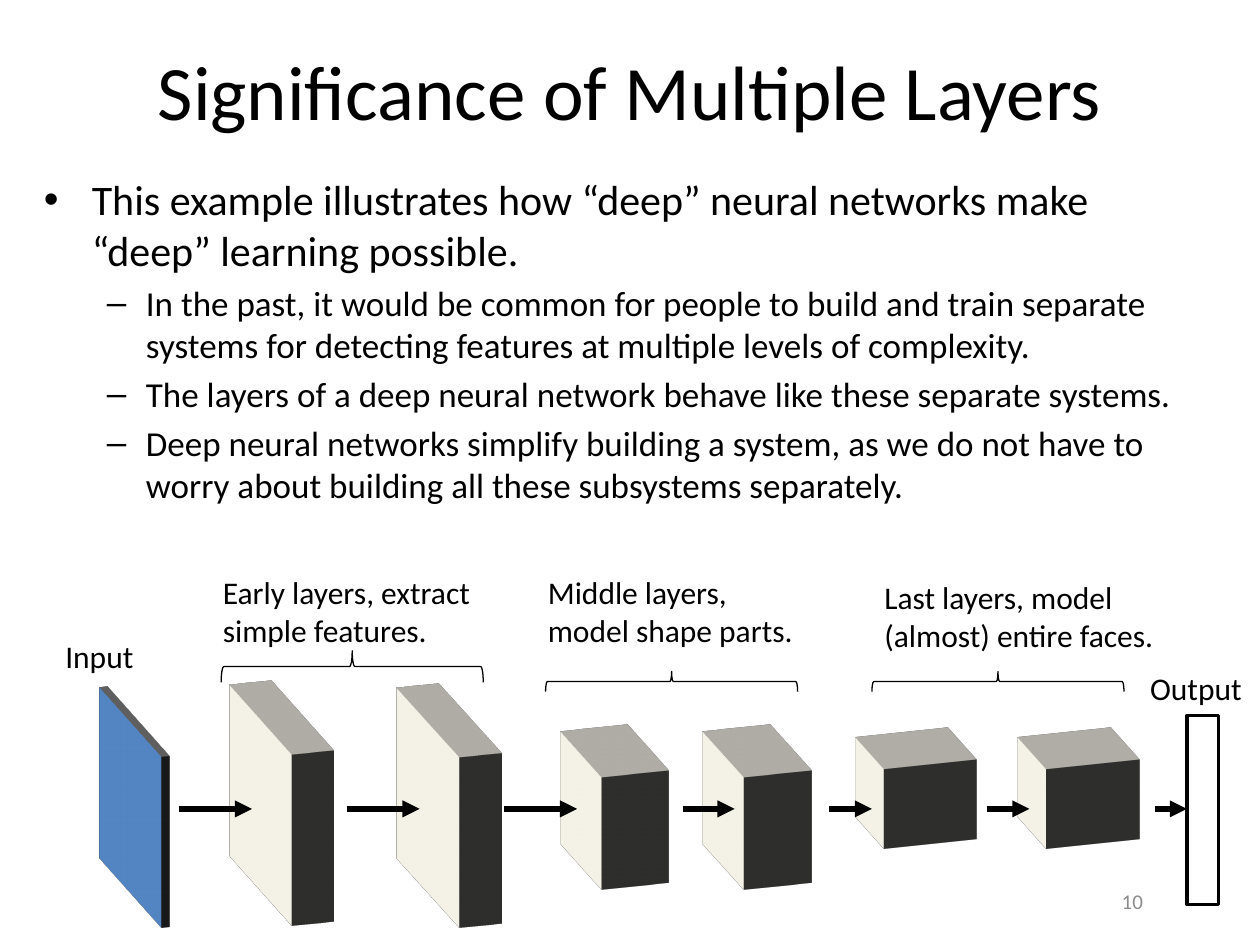
from lxml.etree import SubElement
from pptx import Presentation
from pptx.dml.color import RGBColor
from pptx.enum.shapes import MSO_CONNECTOR, MSO_SHAPE
from pptx.enum.text import MSO_ANCHOR, PP_ALIGN
from pptx.oxml.ns import qn
from pptx.util import Inches, Pt

BLACK = RGBColor(0x00, 0x00, 0x00)
NUMBER_GRAY = RGBColor(0x8C, 0x8C, 0x8C)
INPUT_BLUE = RGBColor(0x4F, 0x81, 0xBD)
INPUT_EDGE = RGBColor(0x80, 0x80, 0x80)
LAYER_GRAY = RGBColor(0xEE, 0xEC, 0xE1)
# View of the blocks, in degrees
LATITUDE, LONGITUDE = 20, 73
DEGREE = 60000

BULLETS = [
    (0, "This example illustrates how “deep” neural networks make “deep” learning possible."),
    (1, "In the past, it would be common for people to build and train separate systems "
        "for detecting features at multiple levels of complexity."),
    (1, "The layers of a deep neural network behave like these separate systems."),
    (1, "Deep neural networks simplify building a system, as we do not have to worry "
        "about building all these subsystems separately."),
]
# Bullet sign, size, left margin, hanging indent
LEVELS = [("•", 24, 0.38, -0.38), ("–", 20, 0.81, -0.31)]

# Label text and box, brace box (before its quarter turn)
GROUPS = [
    ("Early layers, extract simple features.", (1.67, 4.5, 2.17, 0.71), (2.67, 4.25, 0.25, 2.08)),
    ("Middle layers, model shape parts.", (4.25, 4.5, 2.17, 0.71), (5.25, 4.41, 0.16, 2)),
    ("Last layers, model (almost) entire faces.", (6.92, 4.54, 2.42, 0.71), (7.84, 4.41, 0.16, 2)),
]
# Front box, depth, front colour, edge colour
BLOCKS = [
    ((0.19, 5.69, 1.69, 1.44), 0.07, INPUT_BLUE, INPUT_EDGE),
    ((1.22, 5.67, 1.69, 1.44), 0.35, LAYER_GRAY, LAYER_GRAY),
    ((2.55, 5.69, 1.69, 1.44), 0.35, LAYER_GRAY, LAYER_GRAY),
    ((4.05, 5.96, 1.12, 0.95), 0.56, LAYER_GRAY, LAYER_GRAY),
    ((5.18, 5.96, 1.12, 0.95), 0.56, LAYER_GRAY, LAYER_GRAY),
    ((6.51, 5.96, 0.78, 0.67), 0.77, LAYER_GRAY, LAYER_GRAY),
    ((7.8, 5.96, 0.78, 0.67), 0.77, LAYER_GRAY, LAYER_GRAY),
]
ARROW_SPANS = [(1.42, 2), (2.75, 3.33), (4, 4.58), (5.42, 5.83),
               (6.58, 6.92), (7.83, 8.17), (9.17, 9.42)]
ARROW_Y = 6.42


def inches(values):
    return [Inches(value) for value in values]


def format_runs(paragraph, size, color=BLACK):
    for run in paragraph.runs:
        run.font.name = "Calibri"
        run.font.size = Pt(size)
        run.font.color.rgb = color


def add_text(slide, box, text, size, color=BLACK, align=PP_ALIGN.LEFT,
             anchor=MSO_ANCHOR.TOP, wrap=True):
    frame = slide.shapes.add_textbox(*inches(box)).text_frame
    frame.word_wrap = wrap
    frame.vertical_anchor = anchor
    frame.text = text
    frame.paragraphs[0].alignment = align
    format_runs(frame.paragraphs[0], size, color)


def add_bullets(slide, box):
    frame = slide.shapes.add_textbox(*inches(box)).text_frame
    frame.word_wrap = True
    for index, (level, text) in enumerate(BULLETS):
        sign, size, margin, indent = LEVELS[level]
        paragraph = frame.add_paragraph() if index else frame.paragraphs[0]
        paragraph.text = text
        paragraph.level = level
        paragraph.space_before = Pt(size * 0.2)
        format_runs(paragraph, size)
        properties = paragraph._p.get_or_add_pPr()
        properties.set("marL", str(Inches(margin)))
        properties.set("indent", str(Inches(indent)))
        SubElement(properties, qn("a:buFont")).set("typeface", "Arial")
        SubElement(properties, qn("a:buChar")).set("char", sign)


def add_outline(slide, preset, box, width):
    shape = slide.shapes.add_shape(preset, *inches(box))
    shape.shadow.inherit = False
    shape.fill.background()
    shape.line.color.rgb = BLACK
    shape.line.width = Pt(width)
    return shape


def add_block(slide, box, depth, front_color, edge_color):
    """Add a rectangle that is turned to the left and extruded backwards."""
    block = slide.shapes.add_shape(MSO_SHAPE.RECTANGLE, *inches(box))
    block.shadow.inherit = False
    block.fill.solid()
    block.fill.fore_color.rgb = front_color
    block.line.fill.background()
    properties = block._element.spPr
    scene = SubElement(properties, qn("a:scene3d"))
    camera = SubElement(scene, qn("a:camera"), prst="isometricOffAxis1Left")
    SubElement(camera, qn("a:rot"), lat=str(LATITUDE * DEGREE),
               lon=str(LONGITUDE * DEGREE), rev="0")
    SubElement(scene, qn("a:lightRig"), rig="threePt", dir="t")
    solid = SubElement(properties, qn("a:sp3d"), extrusionH=str(Inches(depth)))
    edge = SubElement(solid, qn("a:extrusionClr"))
    SubElement(edge, qn("a:srgbClr"), val=str(edge_color))


def add_arrow(slide, start, end):
    arrow = slide.shapes.add_connector(MSO_CONNECTOR.STRAIGHT, *inches((*start, *end)))
    arrow.line.color.rgb = BLACK
    arrow.line.width = Pt(3.25)
    SubElement(arrow.line._get_or_add_ln(), qn("a:tailEnd")).set("type", "triangle")
    SubElement(arrow._element.spPr, qn("a:effectLst"))


def add_network(slide):
    add_text(slide, (0.42, 5.01, 0.75, 0.4), "Input", 18, wrap=False)
    add_text(slide, (9.03, 5.26, 0.94, 0.4), "Output", 18, wrap=False)
    for label, label_box, brace_box in GROUPS:
        add_text(slide, label_box, label, 18)
        add_outline(slide, MSO_SHAPE.LEFT_BRACE, brace_box, 0.75).rotation = 90
    for block in BLOCKS:
        add_block(slide, *block)
    add_outline(slide, MSO_SHAPE.RECTANGLE, (9.42, 5.68, 0.25, 1.5), 2)
    for start, end in ARROW_SPANS:
        add_arrow(slide, (start, ARROW_Y), (end, ARROW_Y))


def main():
    deck = Presentation()
    deck.slide_width, deck.slide_height = Inches(10), Inches(7.5)
    slide = deck.slides.add_slide(deck.slide_layouts[6])
    add_text(slide, (0.5, 0.17, 9, 1.08), "Significance of Multiple Layers", 44,
             align=PP_ALIGN.CENTER, anchor=MSO_ANCHOR.MIDDLE)
    add_bullets(slide, (0.25, 1.33, 9.42, 1.37))
    add_text(slide, (7.17, 6.95, 2, 0.4), "10", 12, NUMBER_GRAY,
             PP_ALIGN.RIGHT, MSO_ANCHOR.MIDDLE)
    add_network(slide)
    deck.save("out.pptx")


if __name__ == "__main__":
    main()
